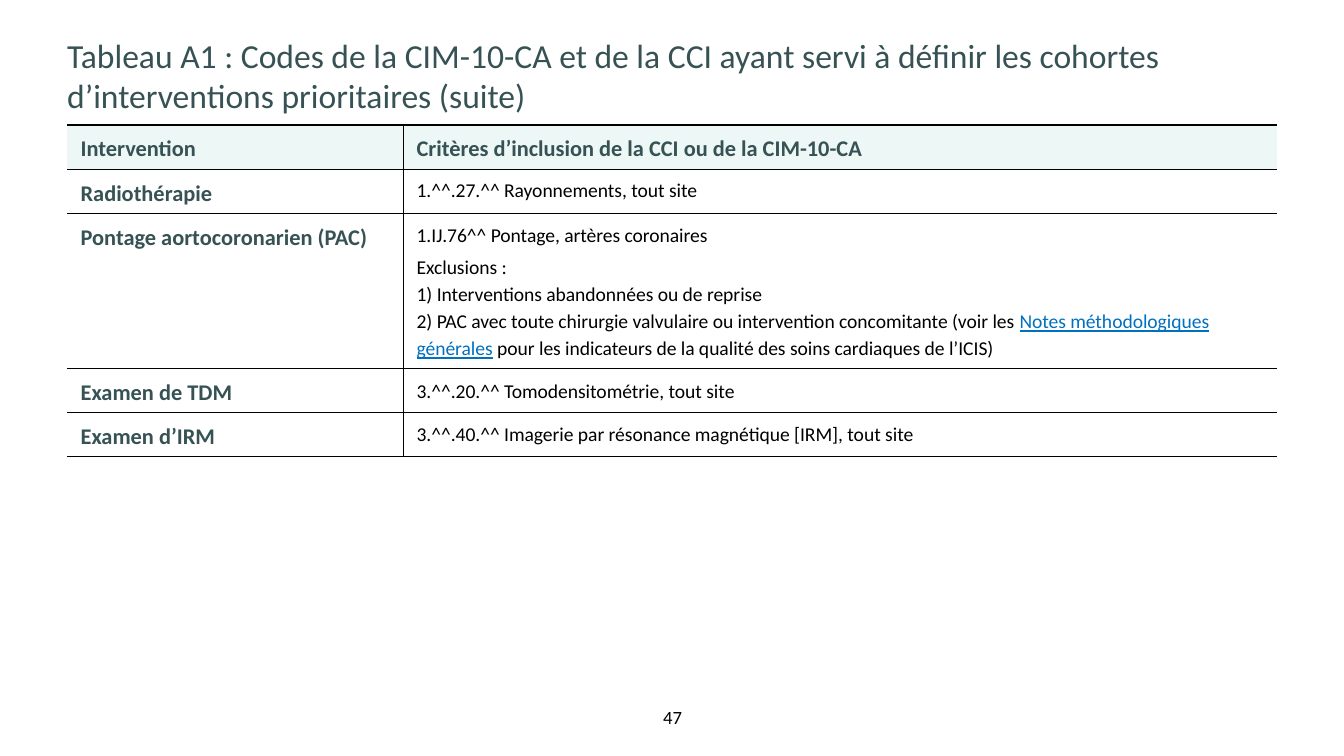
import pptx
import pptx.dml.color
import pptx.enum.text
import pptx.oxml.ns
import pptx.util
import lxml.etree

Inches = pptx.util.Inches
Pt = pptx.util.Pt
ALIGN = pptx.enum.text.PP_ALIGN
ANCHOR = pptx.enum.text.MSO_ANCHOR
COLORS = {"head": "365254", "ink": "000000", "link": "0070C0",
          "band": "EDF7F5", "white": "FFFFFF"}


class Deck:
    face = "Calibri"

    def __init__(self, width, height):
        self.prs = pptx.Presentation()
        self.prs.slide_width = Inches(width)
        self.prs.slide_height = Inches(height)
        self.slide = self.prs.slides.add_slide(self.prs.slide_layouts[6])

    def color(self, name):
        return pptx.dml.color.RGBColor.from_string(COLORS[name])

    def font(self, para, size, color, bold=False):
        para.font.name = self.face
        para.font.size = Pt(size)
        para.font.bold = bold
        para.font.color.rgb = self.color(color)

    def text(self, box, words, size, color, align=ALIGN.LEFT, anchor=ANCHOR.TOP):
        frame = self.slide.shapes.add_textbox(*map(Inches, box)).text_frame
        frame.word_wrap = True
        frame.vertical_anchor = anchor
        frame.margin_left = frame.margin_right = 0
        frame.margin_top = frame.margin_bottom = 0
        para = frame.paragraphs[0]
        para.text = words
        para.alignment = align
        self.font(para, size, color)

    def border(self, cell, side, width):
        props = cell._tc.get_or_add_tcPr()
        line = lxml.etree.SubElement(props, pptx.oxml.ns.qn(f"a:ln{side}"))
        if not width:
            line.set("w", "0")
            lxml.etree.SubElement(line, pptx.oxml.ns.qn("a:noFill"))
            return
        line.set("w", str(Pt(width)))
        fill = lxml.etree.SubElement(line, pptx.oxml.ns.qn("a:solidFill"))
        lxml.etree.SubElement(fill, pptx.oxml.ns.qn("a:srgbClr"), val=COLORS["ink"])

    def cell(self, cell, paras, size, color, bold, fill, borders, anchor):
        for side, width in borders.items():
            self.border(cell, side, width)
        cell.fill.solid()
        cell.fill.fore_color.rgb = self.color(fill)
        cell.vertical_anchor = anchor
        frame = cell.text_frame
        for i, words in enumerate(paras):
            para = frame.add_paragraph() if i else frame.paragraphs[0]
            para.line_spacing = 1.14
            if i:
                para.space_before = Pt(3)
            self.font(para, size, color, bold)
            if isinstance(words, str):
                para.text = words
                continue
            lines, link, tail = words
            for j, line in enumerate(lines):
                if j:
                    para.add_line_break()
                para.add_run().text = line
            run = para.add_run()
            run.text = link
            run.font.underline = True
            run.font.color.rgb = self.color("link")
            para.add_run().text = tail

    def table(self, box, cols, heights, rows):
        table = self.slide.shapes.add_table(
            len(rows), len(cols), *map(Inches, box)).table
        table.first_row = table.horz_banding = False
        for col, width in zip(table.columns, cols):
            col.width = Inches(width)
        for row, height in zip(table.rows, heights):
            row.height = Inches(height)
        for r, (label, paras, anchor) in enumerate(rows):
            for c, words in enumerate(([label], paras)):
                title = r == 0 or c == 0
                borders = {"L": 0.5 * c, "R": 0.5 * (1 - c),
                           "T": 0.5 if r else 1, "B": 0.5}
                self.cell(table.cell(r, c), words,
                          12 if title else 10.5, "head" if title else "ink",
                          title, "white" if r else "band", borders,
                          anchor if c or r == 0 else ANCHOR.TOP)


def main():
    deck = Deck(10, 10 * 9 / 16)
    deck.text((4.69, 5.25, 0.63, 0.17), "47", 10, "ink", ALIGN.CENTER, ANCHOR.MIDDLE)
    deck.text((0.5, 0.26, 9, 0.61),
              "Tableau A1 : Codes de la CIM-10-CA et de la CCI ayant servi à définir "
              "les cohortes d’interventions prioritaires (suite)", 18, "head")
    notes = (["Exclusions :",
              "1) Interventions abandonnées ou de reprise",
              "2) PAC avec toute chirurgie valvulaire ou intervention concomitante (voir les "],
             "Notes méthodologiques générales",
             " pour les indicateurs de la qualité des soins cardiaques de l’ICIS)")
    rows = [
        ("Intervention", ["Critères d’inclusion de la CCI ou de la CIM-10-CA"], ANCHOR.MIDDLE),
        ("Radiothérapie", ["1.^^.27.^^ Rayonnements, tout site"], ANCHOR.TOP),
        ("Pontage aortocoronarien (PAC)",
         ["1.IJ.76^^ Pontage, artères coronaires", notes], ANCHOR.TOP),
        ("Examen de TDM", ["3.^^.20.^^ Tomodensitométrie, tout site"], ANCHOR.MIDDLE),
        ("Examen d’IRM",
         ["3.^^.40.^^ Imagerie par résonance magnétique [IRM], tout site"], ANCHOR.TOP),
    ]
    deck.table((0.5, 0.93, 9, 2.47), (2.5, 6.5), (0.33, 0.33, 1.15, 0.33, 0.33), rows)
    deck.prs.save("out.pptx")


if __name__ == "__main__":
    main()
